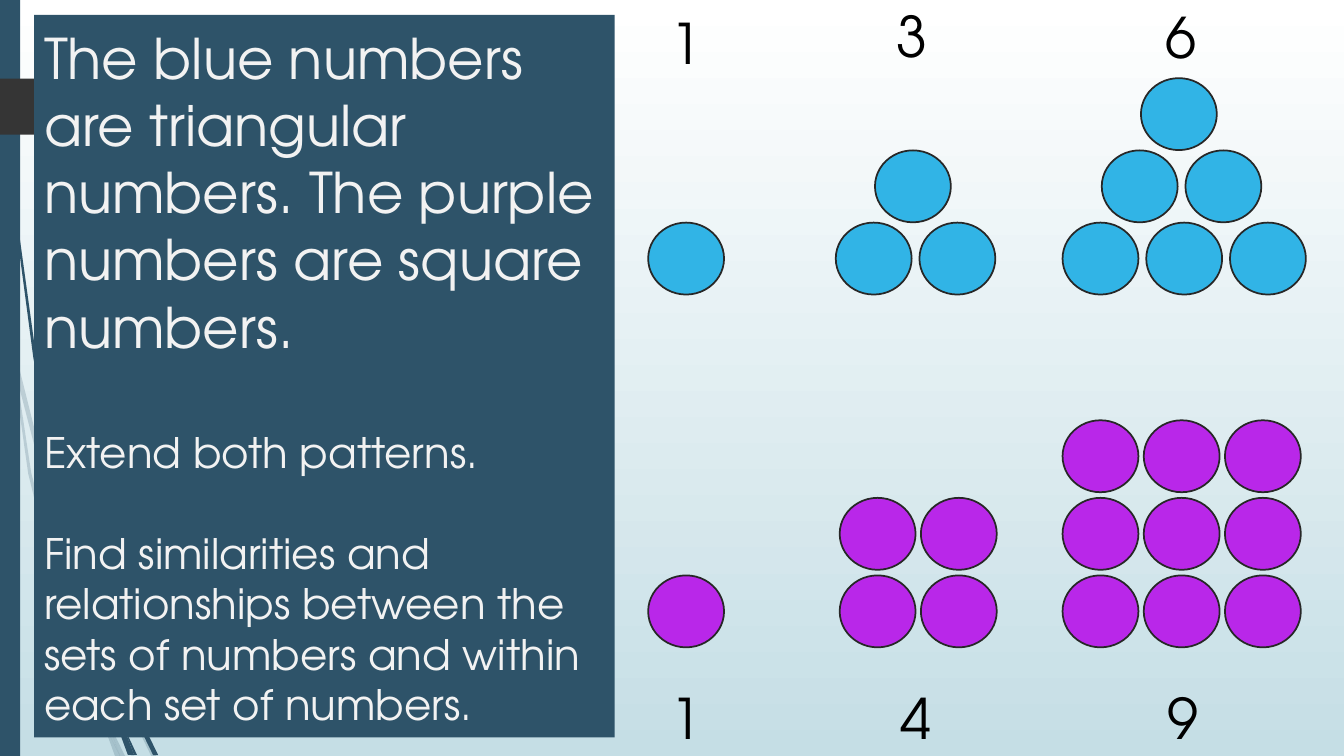
from pptx import Presentation
from pptx.dml.color import RGBColor
from pptx.enum.shapes import MSO_SHAPE
from pptx.enum.text import MSO_ANCHOR, PP_ALIGN
from pptx.oxml.ns import qn
from pptx.util import Pt
from lxml import etree

RECTANGLE, OVAL = MSO_SHAPE.RECTANGLE, MSO_SHAPE.OVAL
MIDDLE, LEFT, CENTER = MSO_ANCHOR.MIDDLE, PP_ALIGN.LEFT, PP_ALIGN.CENTER

COLORS = {
    "sky": "FFFFFF",
    "haze": "C5DEE5",
    "navy": "2E5369",
    "tab": "353535",
    "outline": "272727",
    "blue": "31B4E6",
    "purple": "B927E9",
    "pale": "F2F2F2",
    "black": "000000",
}
FONT = "TeX Gyre Adventor"
SLIDE_WIDTH, SLIDE_HEIGHT = 960, 540
DOT_WIDTH, DOT_HEIGHT = 54.2, 51.4

# Wisps behind the panel, as corner points
FAINT_WISPS = [
    [(41.8, 375.8), (60.5, 431.3), (61.2, 421.9), (44.6, 374.4),
     (26, 312), (10.1, 248.4), (12.2, 270.7), (25.9, 323.5)],
    [(66.2, 437), (63.4, 429.1), (63.4, 439.2), (88.6, 499.7),
     (108, 540), (111.6, 540), (91.4, 498.2)],
    [(85.7, 540), (89.3, 540), (75.6, 511.9)],
    [(67, 491.8), (50.4, 445.7), (22.3, 337.7), (12.2, 270.7), (7.9, 252),
     (20.2, 338.4), (46.8, 447.1), (66.2, 499), (72.7, 514.1), (71.3, 509)],
    [(72.7, 514.1), (82.1, 540), (85.7, 540)],
    [(69.1, 498.2), (67, 491.8), (71.3, 509), (72.7, 514.1),
     (85.7, 540), (75.6, 511.9)],
]
DARK_WISPS = [
    [(5, 79.2), (12.2, 167.8), (23.8, 255.6), (40.3, 343.4), (41, 346.3),
     (39.6, 326.2), (25.9, 255.6), (13.7, 167), (5.8, 78.5), (2.9, 0), (2.2, 0)],
    [(81.4, 467.3), (79.2, 461.5), (79.9, 472.3), (95, 509.8),
     (109.4, 539.3), (113, 539.3), (97.9, 508.3)],
    [(95.8, 539.3), (97.9, 539.3), (87.8, 517.7)],
    [(84.2, 519.8), (91.4, 539.3), (94.3, 539.3)],
    [(83.5, 508.3), (79.2, 497.5), (83.5, 516.2), (84.2, 519.8),
     (93.6, 539.3), (95.8, 539.3), (87.8, 517.7)],
]
TAB = [(0, 56.2), (106, 56.2), (124.9, 76.2), (106, 96.2), (0, 96.2)]

# Panel paragraphs: text, size, space before
PANEL_TEXT = [
    ("The blue numbers are triangular numbers. "
     "The purple numbers are square numbers.", 40, 0),
    ("Extend both patterns.", 30, 48),
    ("Find similarities and relationships between the sets of numbers "
     "and within each set of numbers.", 30, 36),
]

# Number patterns: dots per side, left of bottom row, label and its position
TRIANGLES = [(1, 463, "1", 471.6, 2.9), (2, 597, "3", 632.9, -2.2),
             (3, 759, "6", 825.1, -1.4)]
SQUARES = [(1, 463, "1", 471.6, 484.6), (2, 599.8, "4", 635.8, 484.6),
           (3, 759, "9", 826.6, 484.6)]


class SlidePainter:
    def __init__(self, page, font, colors):
        self.page = page
        self.font = font
        self.colors = colors

    def color(self, name):
        return RGBColor.from_string(self.colors[name])

    def background(self, *names):
        fill = self.page.background.fill
        fill.gradient()
        fill.gradient_angle = 270
        for stop, name in zip(fill.gradient_stops, names):
            stop.color.rgb = self.color(name)

    def paint(self, shape, fill, line=None):
        shape.shadow.inherit = False
        shape.fill.solid()
        shape.fill.fore_color.rgb = self.color(fill)
        if line:
            shape.line.color.rgb = self.color(line)
            shape.line.width = Pt(1.25)
        else:
            shape.line.fill.background()

    def shape(self, kind, left, top, width, height, fill, line=None):
        shape = self.page.shapes.add_shape(
            kind, Pt(left), Pt(top), Pt(width), Pt(height))
        self.paint(shape, fill, line)
        return shape

    def outline(self, points, fill, opacity=100):
        corners = [(Pt(x), Pt(y)) for x, y in points]
        builder = self.page.shapes.build_freeform(*corners[0])
        builder.add_line_segments(corners[1:])
        shape = builder.convert_to_shape()
        self.paint(shape, fill)
        if opacity < 100:
            color = shape.fill._xPr.find(qn("a:solidFill"))[0]
            etree.SubElement(color, qn("a:alpha")).set("val", str(opacity * 1000))

    def format(self, para, size, color, align):
        para.alignment = align
        for span in para.runs:
            span.font.name = self.font
            span.font.size = Pt(size)
            span.font.color.rgb = self.color(color)

    def label(self, text, left, top):
        box = self.page.shapes.add_textbox(Pt(left), Pt(top), Pt(36.7), Pt(55.4))
        box.text_frame.word_wrap = False
        box.text_frame.text = text
        self.format(box.text_frame.paragraphs[0], 40, "black", CENTER)

    def panel(self, left, top, width, height, content):
        frame = self.shape(RECTANGLE, left, top, width, height, "navy").text_frame
        frame.word_wrap = True
        frame.vertical_anchor = MIDDLE
        for index, (text, size, gap) in enumerate(content):
            para = frame.add_paragraph() if index else frame.paragraphs[0]
            para.text = text
            para.space_before = Pt(gap)
            self.format(para, size, "pale", LEFT)

    def pattern(self, side, left, base, pitch, shift, shrink, fill):
        """Rows from the bottom up; each is moved by shift, shorter by shrink."""
        across, up = pitch
        for row in range(side):
            for column in range(side - row * shrink):
                self.shape(OVAL, left + row * shift + column * across,
                           base - row * up, DOT_WIDTH, DOT_HEIGHT, fill, "outline")


def main():
    deck = Presentation()
    deck.slide_width, deck.slide_height = Pt(SLIDE_WIDTH), Pt(SLIDE_HEIGHT)
    page = deck.slides.add_slide(deck.slide_layouts[6])
    painter = SlidePainter(page, FONT, COLORS)

    # Backdrop
    painter.background("sky", "haze")
    for wisp in FAINT_WISPS:
        painter.outline(wisp, "navy", opacity=20)
    for wisp in DARK_WISPS:
        painter.outline(wisp, "navy")
    painter.shape(RECTANGLE, 0, 0, 14.4, SLIDE_HEIGHT, "navy")
    painter.outline(TAB, "tab")

    # Triangular numbers
    for side, left, text, label_left, label_top in TRIANGLES:
        painter.pattern(side, left, 159, (59.8, 51.6), 28, 1, "blue")
        painter.label(text, label_left, label_top)

    # Square numbers
    for side, left, text, label_left, label_top in SQUARES:
        painter.pattern(side, left, 411, (58, 55.4), 0, 0, "purple")
        painter.label(text, label_left, label_top)

    # Instructions
    painter.panel(24.4, 10.6, 414.6, 516.2, PANEL_TEXT)

    deck.save("out.pptx")


if __name__ == "__main__":
    main()
